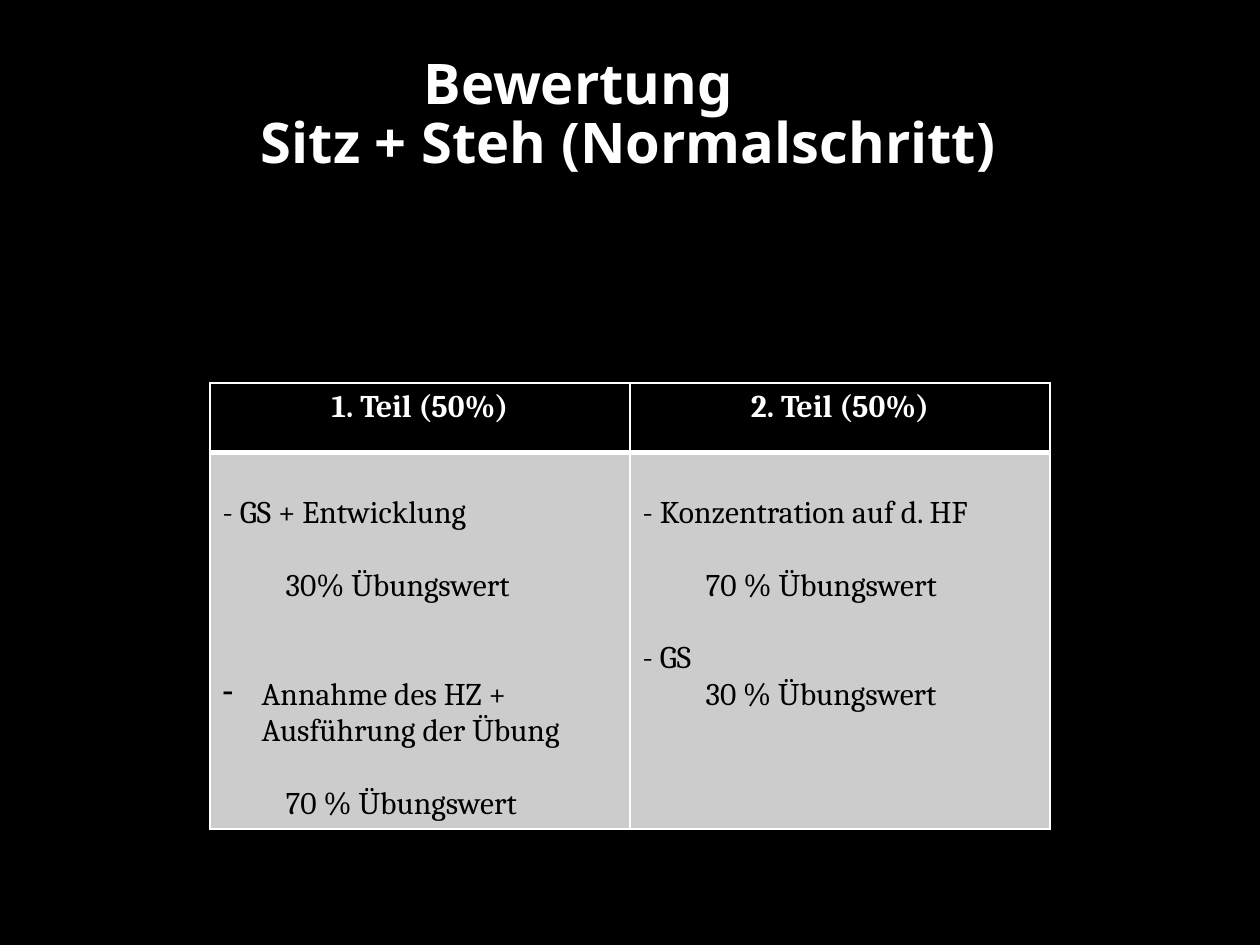
from lxml import etree
from pptx import Presentation
from pptx.dml.color import RGBColor
from pptx.enum.text import MSO_ANCHOR, MSO_AUTO_SIZE, PP_ALIGN
from pptx.oxml.ns import qn
from pptx.util import Emu, Inches, Pt

CENTER, LEFT = PP_ALIGN.CENTER, PP_ALIGN.LEFT
MIDDLE, NO_FIT = MSO_ANCHOR.MIDDLE, MSO_AUTO_SIZE.NONE

BLACK, WHITE, GRAY = "000000", "FFFFFF", "CCCCCC"
TITLE = "Bewertung\vSitz + Steh (Normalschritt)"
HEADERS = ["1. Teil (50%)", "2. Teil (50%)"]
# Each entry: text, style, empty lines above it
BODIES = [
    [("- GS + Entwicklung", "plain", 0),
     ("30% Übungswert", "value", 1),
     ("Annahme des HZ + Ausführung der Übung", "bullet", 2),
     ("70 % Übungswert", "value", 1)],
    [("- Konzentration auf d. HF", "plain", 0),
     ("70 % Übungswert", "value", 1),
     ("- GS", "plain", 1),
     ("30 % Übungswert", "value", 0)],
]
INDENTS = {"plain": (0, 0), "value": (0.5, 0), "bullet": (0.31, -0.31)}
LINE = 20.8  # height of one table text line in points
ROW_HEIGHTS = [0.55, 2.99]


def color(value):
    return RGBColor.from_string(value)


def set_font(paragraph, name, size, value, bold):
    font = paragraph.font
    font.name, font.size, font.bold = name, Pt(size), bold
    font.color.rgb = color(value)


def set_indent(paragraph, margin, first_line):
    properties = paragraph._p.get_or_add_pPr()
    properties.set("marL", str(Inches(margin)))
    properties.set("indent", str(Inches(first_line)))
    return properties


def set_borders(cell, widths):
    """Draw white borders; widths maps L, R, T and B to points."""
    properties = cell._tc.get_or_add_tcPr()
    for position, (side, width) in enumerate(widths.items()):
        line = etree.Element(qn(f"a:ln{side}"), w=str(Pt(width)))
        fill = etree.SubElement(line, qn("a:solidFill"))
        etree.SubElement(fill, qn("a:srgbClr"), val=WHITE)
        properties.insert(position, line)


def fill_cell(cell, fill, bottom_width):
    cell.fill.solid()
    cell.fill.fore_color.rgb = color(fill)
    set_borders(cell, {"L": 1, "R": 1, "T": 1, "B": bottom_width})


def write_body(cell, entries):
    frame = cell.text_frame
    cell.margin_top = Inches(0.05) + Pt(LINE)
    for number, (text, style, gap) in enumerate(entries):
        paragraph = frame.paragraphs[0] if number == 0 else frame.add_paragraph()
        paragraph.text = text
        paragraph.space_before = Pt(gap * LINE)
        properties = set_indent(paragraph, *INDENTS[style])
        if style == "bullet":
            etree.SubElement(properties, qn("a:buChar"), char="-")
        set_font(paragraph, "Cambria", 18, BLACK, False)


presentation = Presentation()
presentation.slide_width, presentation.slide_height = Inches(10), Inches(7.5)
width, height = presentation.slide_width, presentation.slide_height
slide = presentation.slides.add_slide(presentation.slide_layouts[5])
slide.background.fill.solid()
slide.background.fill.fore_color.rgb = color(BLACK)

title = slide.shapes.title
title.left, title.top = Emu(int(width * 0.05)), Emu(int(height * 0.04))
title.width, title.height = Emu(int(width * 0.9)), Inches(1.25)
title.text_frame.text = TITLE
title.text_frame.auto_size = NO_FIT
title.text_frame.vertical_anchor = MIDDLE
heading = title.text_frame.paragraphs[0]
heading.alignment = LEFT
heading.line_spacing = 0.88
set_indent(heading, 1.47, 1.29)
set_font(heading, "Noto Sans", 32, WHITE, True)

table_width = width * 2 // 3
table = slide.shapes.add_table(
    2, len(HEADERS), (width - table_width) // 2, Inches(3.04),
    table_width, Inches(sum(ROW_HEIGHTS))).table
for row, row_height in zip(table.rows, ROW_HEIGHTS):
    row.height = Inches(row_height)
for column, (header, entries) in enumerate(zip(HEADERS, BODIES)):
    head, body = table.cell(0, column), table.cell(1, column)
    fill_cell(head, BLACK, 3)
    head.text_frame.text = header
    paragraph = head.text_frame.paragraphs[0]
    paragraph.alignment = CENTER
    set_font(paragraph, "Cambria", 18, WHITE, True)
    fill_cell(body, GRAY, 1)
    write_body(body, entries)

presentation.save("out.pptx")
